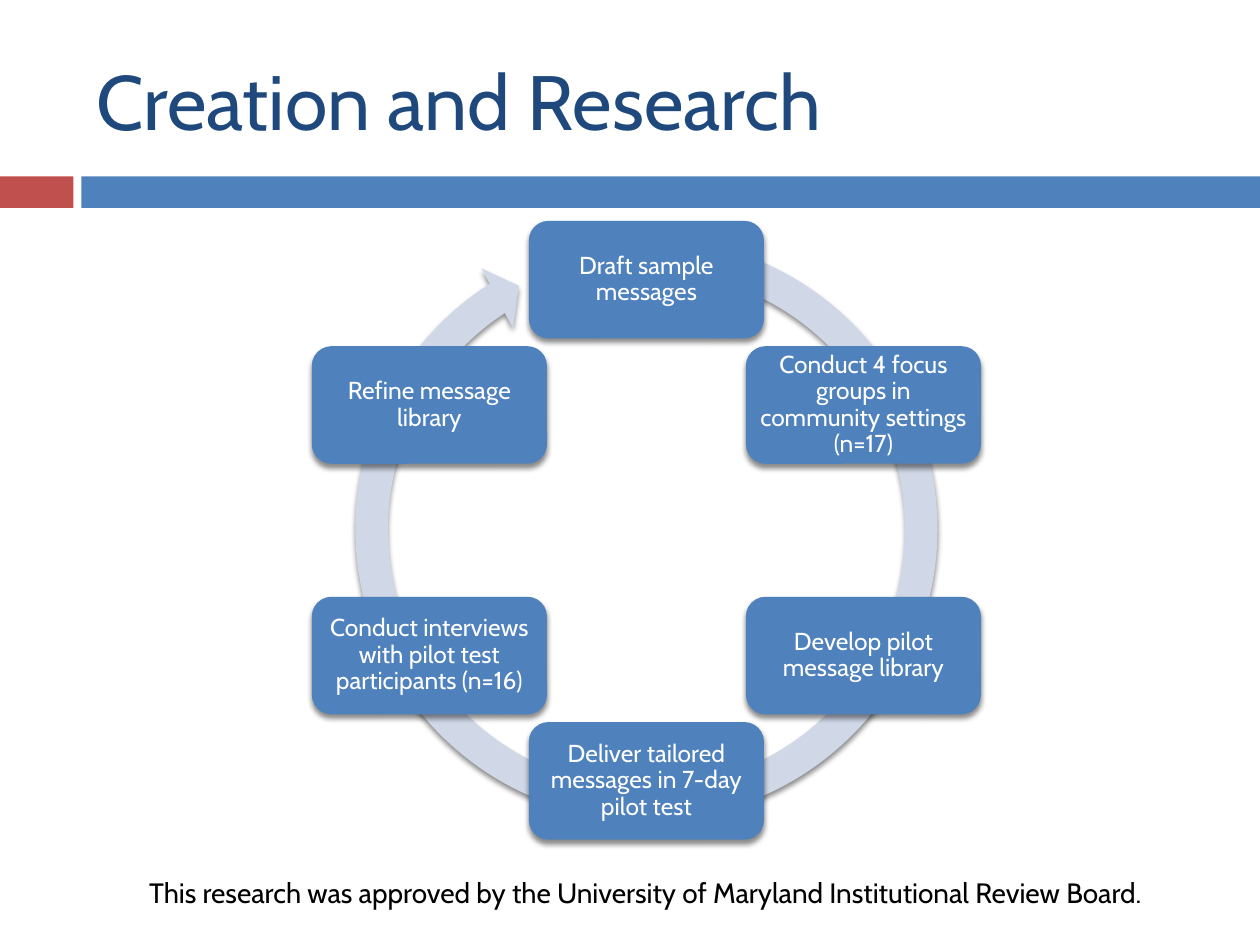
from math import cos, radians, sin

from lxml import etree
from pptx import Presentation
from pptx.dml.color import RGBColor
from pptx.enum.shapes import MSO_SHAPE as Shape
from pptx.enum.text import MSO_ANCHOR as Anchor, PP_ALIGN as Align
from pptx.oxml.ns import qn
from pptx.util import Pt

BLUE = RGBColor(0x4F, 0x81, 0xBD)
RED = RGBColor(0xC0, 0x50, 0x4D)
NAVY = RGBColor(0x1F, 0x49, 0x7D)
PALE = RGBColor(0xD0, 0xD8, 0xE8)
WHITE = RGBColor(0xFF, 0xFF, 0xFF)
BLACK = RGBColor(0x00, 0x00, 0x00)

STEPS = [
    "Draft sample messages",
    "Conduct 4 focus groups in community settings (n=17)",
    "Develop pilot message library",
    "Deliver tailored messages in 7-day pilot test",
    "Conduct interviews with pilot test participants (n=16)",
    "Refine message library",
]
CENTER_X, CENTER_Y, RADIUS = 369.4, 303, 143.2
STEP_WIDTH, STEP_HEIGHT = 134.4, 67.2
RING_SIZE = 352.8


def add_filled(kind, left, top, width, height, color, shadow=False):
    """Add a borderless preset shape, with a soft shadow below it if asked."""
    shape = page.shapes.add_shape(kind, Pt(left), Pt(top), Pt(width), Pt(height))
    shape.fill.solid()
    shape.fill.fore_color.rgb = color
    shape.line.fill.background()
    shape.shadow.inherit = False
    if shadow:
        effects = shape.fill._xPr.find(qn("a:effectLst"))
        outer = etree.SubElement(
            effects, qn("a:outerShdw"), blurRad=str(Pt(3)), dist=str(Pt(2.4)),
            dir="5400000", rotWithShape="0")
        tint = etree.SubElement(outer, qn("a:srgbClr"), val="000000")
        etree.SubElement(tint, qn("a:alpha"), val="45000")
    return shape


def write(frame, text, size, color, align, **paragraph_format):
    frame.word_wrap = True
    para = frame.paragraphs[0]
    para.alignment = align
    for name, value in paragraph_format.items():
        setattr(para, name, value)
    span = para.add_run()
    span.text = text
    for name, value in {"name": "Cabin", "size": Pt(size)}.items():
        setattr(span.font, name, value)
    span.font.color.rgb = color


deck = Presentation()
deck.slide_width, deck.slide_height = Pt(720), Pt(540)
page = deck.slides.add_slide(deck.slide_layouts[5])

# Title and the band under it
title = page.shapes.title
for name, value in {"left": 48, "top": 18, "width": 642, "height": 78}.items():
    setattr(title, name, Pt(value))
title.text_frame.vertical_anchor = Anchor.MIDDLE
write(title.text_frame, "Creation and Research", 44, NAVY, Align.LEFT)

add_filled(Shape.RECTANGLE, 0, 100.8, 42, 18, RED)
add_filled(Shape.RECTANGLE, 46.5, 100.8, 673.5, 18, BLUE)

# Ring arrow behind the steps
ring = add_filled(Shape.CIRCULAR_ARROW, CENTER_X - RING_SIZE / 2, 126,
                  RING_SIZE, RING_SIZE, PALE, shadow=True)
for index, value in enumerate([0.053, 3.126, 142.273, 171.275, 0.055]):
    ring.adjustments[index] = value

# Steps, clockwise from the top
for index, step in enumerate(STEPS):
    angle = radians(index * 360 / len(STEPS))
    left = CENTER_X + RADIUS * sin(angle) - STEP_WIDTH / 2
    top = CENTER_Y - RADIUS * cos(angle) - STEP_HEIGHT / 2
    box = add_filled(Shape.ROUNDED_RECTANGLE, left, top,
                     STEP_WIDTH, STEP_HEIGHT, BLUE, shadow=True)
    frame = box.text_frame
    for side in ("left", "top", "right", "bottom"):
        setattr(frame, f"margin_{side}", Pt(4.2))
    frame.vertical_anchor = Anchor.MIDDLE
    write(frame, step, 14, WHITE, Align.CENTER, line_spacing=0.9)

# Approval note
note = page.shapes.add_textbox(Pt(48), Pt(496.8), Pt(642), Pt(26.6))
write(note.text_frame,
      "This research was approved by the University of Maryland Institutional Review Board.",
      16, BLACK, Align.CENTER)

deck.save("out.pptx")
